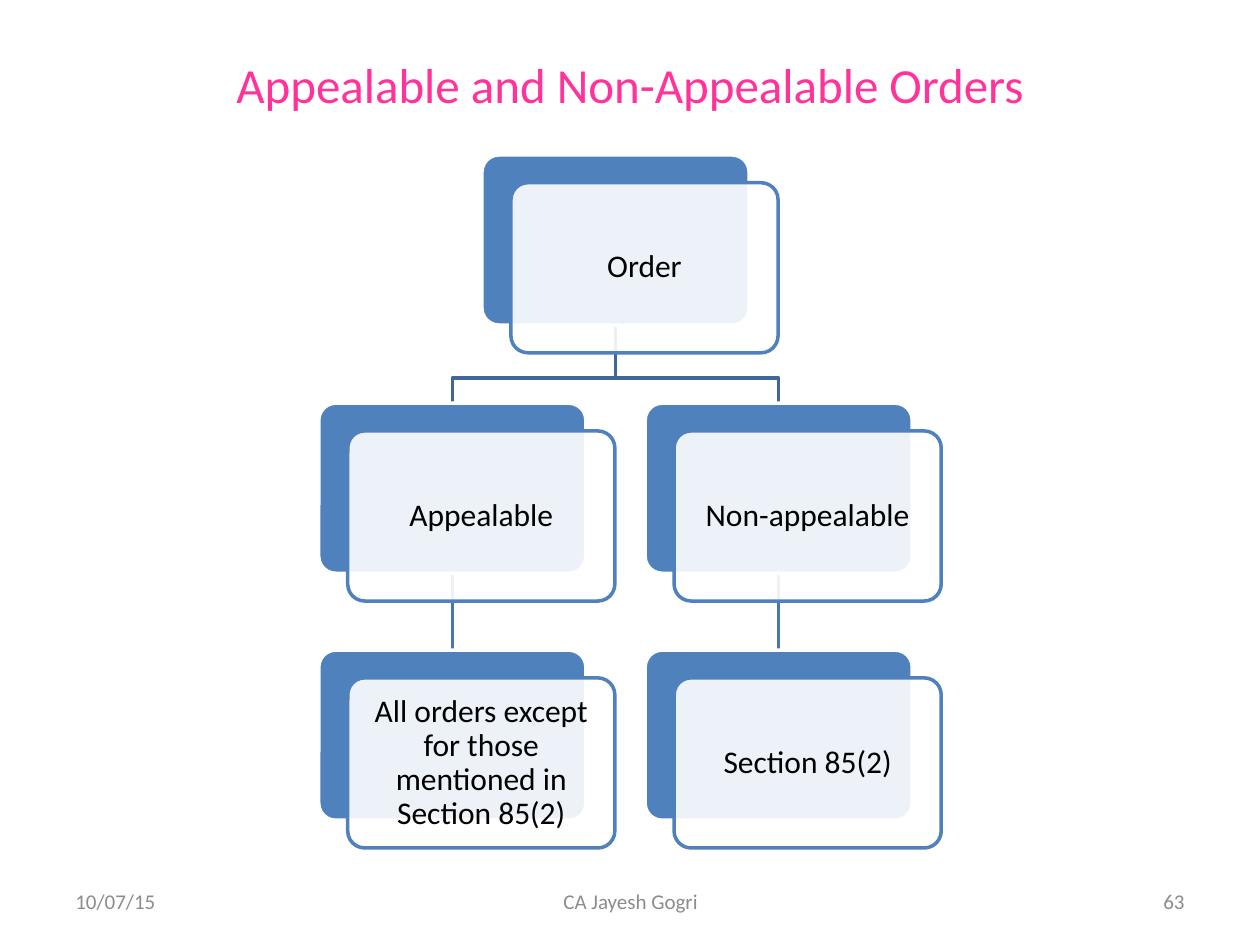
from lxml.etree import SubElement
from pptx import Presentation
from pptx.dml.color import RGBColor
from pptx.enum.shapes import MSO_CONNECTOR, MSO_SHAPE
from pptx.enum.text import MSO_ANCHOR, PP_ALIGN
from pptx.oxml.ns import qn
from pptx.util import Inches, Pt

COLORS = {
    "title": "FF3399",
    "box": "4F81BD",
    "white": "FFFFFF",
    "text": "000000",
    "branch": "3F6797",
    "link": "4875AC",
    "footer": "8C8C8C",
}
BOX_WIDTH, BOX_HEIGHT = 2.12, 1.35
SHIFT_RIGHT, SHIFT_DOWN = 0.23, 0.22
COLUMNS = [2.53, 5.12]
ROWS = [1.23, 3.2, 5.16]
ORDER_LEFT = sum(COLUMNS) / 2


def write(frame, text, size, color, align):
    frame.word_wrap = True
    frame.vertical_anchor = MSO_ANCHOR.MIDDLE
    para = frame.paragraphs[0]
    para.alignment = align
    span = para.add_run()
    span.text = text
    span.font.name = "Calibri"
    span.font.size = Pt(size)
    span.font.color.rgb = RGBColor.from_string(COLORS[color])
    return para


def add_box(left, top, fill, line):
    box = page.shapes.add_shape(
        MSO_SHAPE.ROUNDED_RECTANGLE,
        Inches(left), Inches(top), Inches(BOX_WIDTH), Inches(BOX_HEIGHT),
    )
    box.adjustments[0] = 0.1
    box.shadow.inherit = False
    box.fill.solid()
    box.fill.fore_color.rgb = RGBColor.from_string(COLORS[fill])
    box.line.color.rgb = RGBColor.from_string(COLORS[line])
    box.line.width = Pt(2)
    return box


deck = Presentation()
deck.slide_width, deck.slide_height = Inches(10), Inches(7.5)
page = deck.slides.add_slide(deck.slide_layouts[5])

title = page.shapes.title
title.left, title.top = Inches(0.5), Inches(0.33)
title.width, title.height = Inches(9), Inches(0.67)
write(title.text_frame, "Appealable and Non-Appealable Orders", 28, "title", PP_ALIGN.CENTER)

order_center = Inches(ORDER_LEFT + BOX_WIDTH / 2)
bend = Inches(3)
links = []
for left in COLUMNS:
    center = Inches(left + BOX_WIDTH / 2)
    builder = page.shapes.build_freeform(order_center, Inches(ROWS[0] + BOX_HEIGHT))
    builder.add_line_segments(
        [(order_center, bend), (center, bend), (center, Inches(ROWS[1]))], close=False
    )
    branch = builder.convert_to_shape()
    branch.shadow.inherit = False
    branch.fill.background()
    branch.line.color.rgb = RGBColor.from_string(COLORS["branch"])
    branch.line.width = Pt(2)

    link = page.shapes.add_connector(
        MSO_CONNECTOR.STRAIGHT,
        center, Inches(ROWS[1] + BOX_HEIGHT), center, Inches(ROWS[2]),
    )
    link.line.color.rgb = RGBColor.from_string(COLORS["link"])
    link.line.width = Pt(2)
    SubElement(link._element.spPr, qn("a:effectLst"))
    links.append(link)

nodes = [
    ("Order", ORDER_LEFT, ROWS[0]),
    ("Appealable", COLUMNS[0], ROWS[1]),
    ("All orders except for those mentioned in Section 85(2)", COLUMNS[0], ROWS[2]),
    ("Non-appealable", COLUMNS[1], ROWS[1]),
    ("Section 85(2)", COLUMNS[1], ROWS[2]),
]
boxes = []
for text, left, top in nodes:
    boxes.append(add_box(left, top, "box", "white"))
    panel = add_box(left + SHIFT_RIGHT, top + SHIFT_DOWN, "white", "box")
    color = panel._element.spPr.find(qn("a:solidFill"))[0]
    SubElement(color, qn("a:alpha"), val="90000")
    frame = panel.text_frame
    frame.margin_left = frame.margin_right = Inches(0.07)
    frame.margin_top = frame.margin_bottom = Inches(0.07)
    write(frame, text, 18, "text", PP_ALIGN.CENTER).line_spacing = 0.9

for link, upper, lower in zip(links, boxes[1::2], boxes[2::2]):
    link.begin_connect(upper, 2)
    link.end_connect(lower, 0)

footers = [
    ("10/07/15", 0.5, 2.33, PP_ALIGN.LEFT),
    ("CA Jayesh Gogri", 3.42, 3.17, PP_ALIGN.CENTER),
    ("63", 7.17, 2.33, PP_ALIGN.RIGHT),
]
for text, left, width, align in footers:
    footer = page.shapes.add_textbox(Inches(left), Inches(6.95), Inches(width), Inches(0.4))
    write(footer.text_frame, text, 12, "footer", align)

deck.save("out.pptx")
